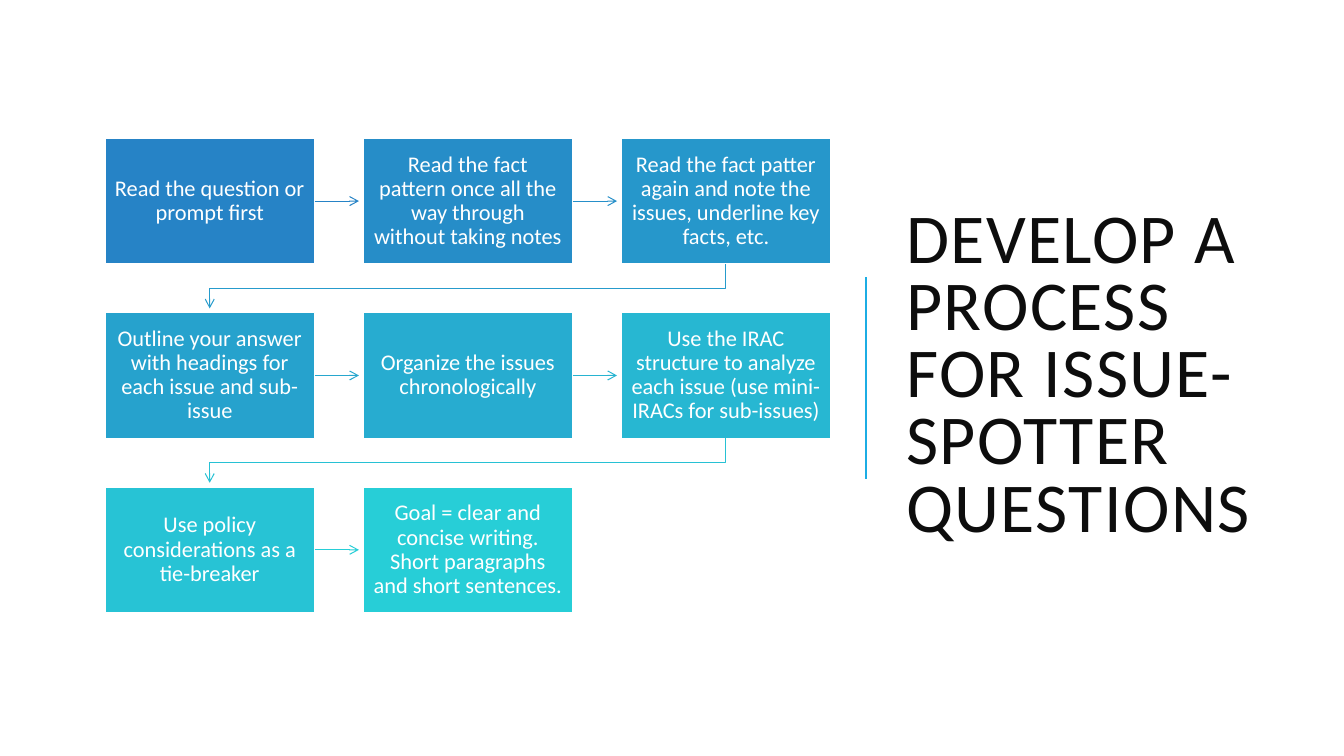
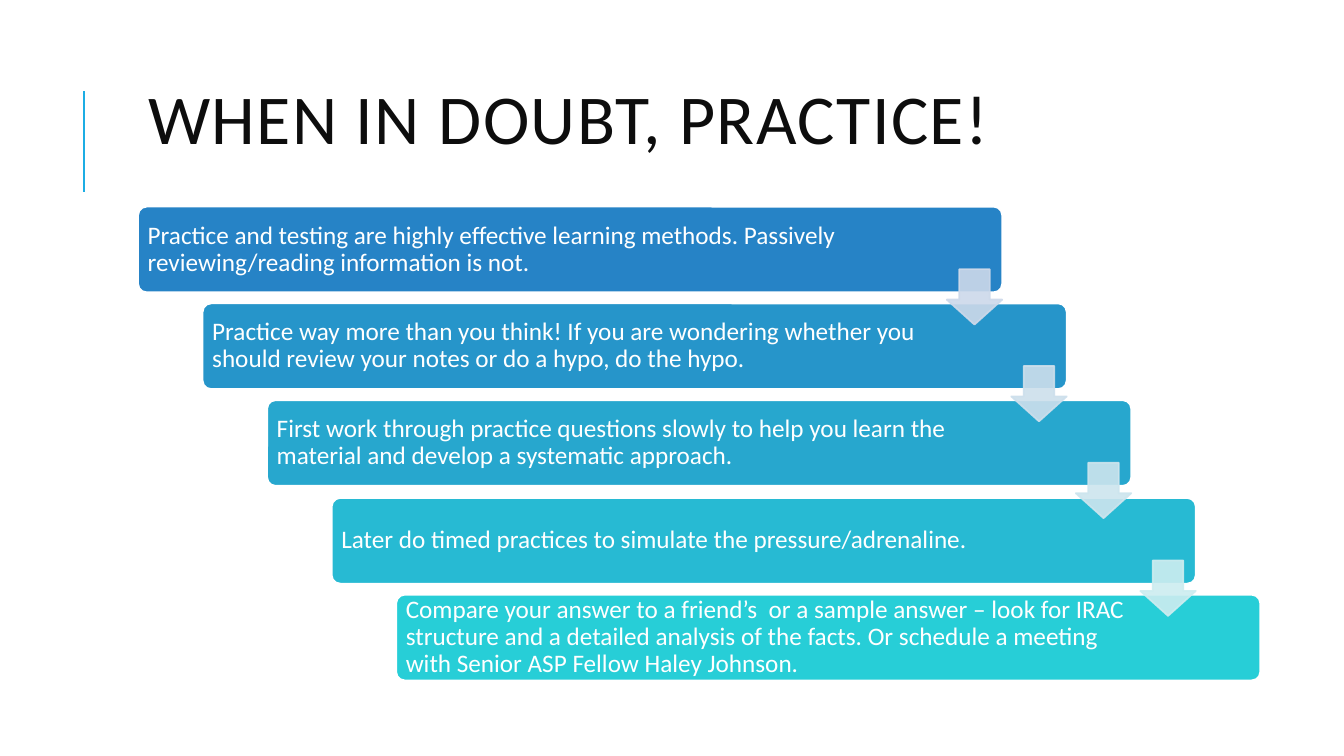
import pptx
import pptx.util
import pptx.dml.color
import pptx.enum.shapes
import pptx.enum.text
import pptx.oxml
import pptx.oxml.ns

PX = 9144  # EMU per px, 100 px to the inch
FONT = "Calibri"
WHITE, INK, ACCENT = "FFFFFF", "0D0D0D", "1CADE4"
SHAPES = pptx.enum.shapes.MSO_SHAPE
STRAIGHT = pptx.enum.shapes.MSO_CONNECTOR.STRAIGHT
LEFT, CENTER = pptx.enum.text.PP_ALIGN.LEFT, pptx.enum.text.PP_ALIGN.CENTER

# Content: text, box colour, colour of the arrow to the next box
PROCESS_TITLE = "DEVELOP A PROCESS FOR ISSUE-SPOTTER QUESTIONS"
PROCESS_STEPS = [
    ("Read the question or prompt first", "2683C6", "2683C6"),
    ("Read the fact pattern once all the way through without taking notes", "268DC8", "268FC9"),
    ("Read the fact patter again and note the issues, underline key facts, etc.", "2697CB", "269BCC"),
    ("Outline your answer with headings for each issue and sub-issue", "26A2CD", "27A7CE"),
    ("Organize the issues chronologically", "27ACD0", "27B4D1"),
    ("Use the IRAC structure to analyze each issue (use mini-IRACs for sub-issues)", "27B7D2", "27C1D4"),
    ("Use policy considerations as a tie-breaker", "27C3D5", "27CED7"),
    ("Goal = clear and concise writing. Short paragraphs and short sentences.", "27CED7", None),
]
PRACTICE_TITLE = "WHEN IN DOUBT, PRACTICE!"
PRACTICE_TIPS = [
    ("Practice and testing are highly effective learning methods. "
     "Passively reviewing/reading information is not.", "2683C6", "CDD9EA"),
    ("Practice way more than you think! If you are wondering whether you should "
     "review your notes or do a hypo, do the hypo.", "2695CA", "CDDFEC"),
    ("First work through practice questions slowly to help you learn the material "
     "and develop a systematic approach.", "27A7CE", "CDE5EE"),
    ("Later do timed practices to simulate the pressure/adrenaline.", "27BAD3", "CDEDF0"),
    ("Compare your answer to a friend’s  or a sample answer – look for IRAC structure "
     "and a detailed analysis of the facts. Or schedule a meeting with Senior ASP Fellow "
     "Haley Johnson.", "27CED7", None),
]


# Shared helpers
def color(value):
    return pptx.dml.color.RGBColor.from_string(value)


def px(*values):
    return [round(value * PX) for value in values]


def style_line(line, value, points):
    line.color.rgb = color(value)
    line.width = pptx.util.Pt(points)


def add_arrowhead(shape):
    tail = pptx.oxml.parse_xml(f'<a:tailEnd {pptx.oxml.ns.nsdecls("a")} type="arrow"/>')
    shape.line._get_or_add_ln().append(tail)


def write(shape, text, size, value, align, spacing, insets):
    frame = shape.text_frame
    frame.word_wrap = True
    frame.vertical_anchor = pptx.enum.text.MSO_ANCHOR.MIDDLE
    (frame.margin_left, frame.margin_top,
     frame.margin_right, frame.margin_bottom) = px(*insets)
    paragraph = frame.paragraphs[0]
    paragraph.text = text
    paragraph.alignment = align
    paragraph.line_spacing = spacing
    paragraph.font.name = FONT
    paragraph.font.size = pptx.util.Pt(size)
    paragraph.font.color.rgb = color(value)
    return paragraph


def add_box(slide, kind, bounds, fill, outline=WHITE):
    shape = slide.shapes.add_shape(kind, *px(*bounds))
    shape.shadow.inherit = False
    shape.fill.solid()
    shape.fill.fore_color.rgb = color(fill)
    style_line(shape.line, outline, 1.25)
    return shape


def add_line(slide, start, end, value, points):
    line = slide.shapes.add_connector(STRAIGHT, *px(*start, *end))
    style_line(line.line, value, points)
    line._element.spPr.append(pptx.oxml.parse_xml(
        f'<a:effectLst {pptx.oxml.ns.nsdecls("a")}/>'))
    return line


def add_title(slide, text, bounds, rule_x, rule_top, rule_bottom):
    add_line(slide, (rule_x, rule_bottom), (rule_x, rule_top), ACCENT, 1.5)
    title = slide.shapes.add_textbox(*px(*bounds))
    paragraph = write(title, text, 50, INK, LEFT, 0.8, (10, 5, 10, 5))
    paragraph.runs[0]._r.get_or_add_rPr().set("spc", "100")


# Slide 1: steps in rows of three, joined by arrows
def build_process(slide):
    add_title(slide, PROCESS_TITLE, (889, 70, 380, 609), 859, 275, 475)
    left, top, width, height = 104, 137, 208, 125
    pitch_x, pitch_y, columns, tip_gap = 256, 173, 3, 4
    for index, (text, fill, arrow_color) in enumerate(PROCESS_STEPS):
        row, column = divmod(index, columns)
        x, y = left + column * pitch_x, top + row * pitch_y
        box = add_box(slide, SHAPES.RECTANGLE, (x, y, width, height), fill)
        write(box, text, 16, WHITE, CENTER, 0.9, (10, 11, 10, 11))
        if arrow_color is None:
            continue
        if column < columns - 1:
            middle = y + height / 2
            arrow = add_line(slide, (x + width, middle),
                             (x + pitch_x - tip_gap, middle), arrow_color, 0.75)
            arrow.begin_connect(box, 3)
        else:
            start_x, end_x = x + width // 2, left + width // 2
            bottom, turn = y + height, y + height + 24
            outline = slide.shapes.build_freeform(start_x, bottom, scale=PX)
            outline.add_line_segments(
                [(start_x, turn), (end_x, turn), (end_x, y + pitch_y - tip_gap)],
                close=False)
            arrow = outline.convert_to_shape()
            arrow.shadow.inherit = False
            arrow.fill.background()
            style_line(arrow.line, arrow_color, 0.75)
        add_arrowhead(arrow)


# Slide 2: staircase of tips with a down arrow between neighbours
def build_practice(slide):
    add_title(slide, PRACTICE_TITLE, (137, 42, 1113, 163), 83, 90, 190)
    left, top, width, height = 137, 205, 857, 85
    step_x, step_y, arrow_size, arrow_drop = 64, 96.25, 55, 62
    corners = [(left + i * step_x, top + round(i * step_y))
               for i in range(len(PRACTICE_TIPS))]
    for index, ((x, y), (text, fill, _)) in enumerate(zip(corners, PRACTICE_TIPS)):
        bar = add_box(slide, SHAPES.ROUNDED_RECTANGLE, (x, y, width, height), fill)
        bar.adjustments[0] = 0.1
        right_inset = 127 if index else 104
        write(bar, text, 18, WHITE, LEFT, 0.9, (7, 7, right_inset, 7))
    for (x, y), (_, _, tint) in zip(corners[:-1], PRACTICE_TIPS):
        bounds = (x + width - arrow_size, y + arrow_drop, arrow_size, arrow_size)
        arrow = add_box(slide, SHAPES.DOWN_ARROW, bounds, tint, tint)
        arrow.adjustments[0], arrow.adjustments[1] = 0.55, 0.45
        for node in arrow._element.spPr.iter(pptx.oxml.ns.qn("a:srgbClr")):
            node.append(pptx.oxml.parse_xml(
                f'<a:alpha {pptx.oxml.ns.nsdecls("a")} val="90000"/>'))


def main():
    presentation = pptx.Presentation()
    presentation.slide_width, presentation.slide_height = px(1333, 750)
    blank = presentation.slide_layouts[6]
    for build in (build_process, build_practice):
        build(presentation.slides.add_slide(blank))
    presentation.save("out.pptx")


if __name__ == "__main__":
    main()
